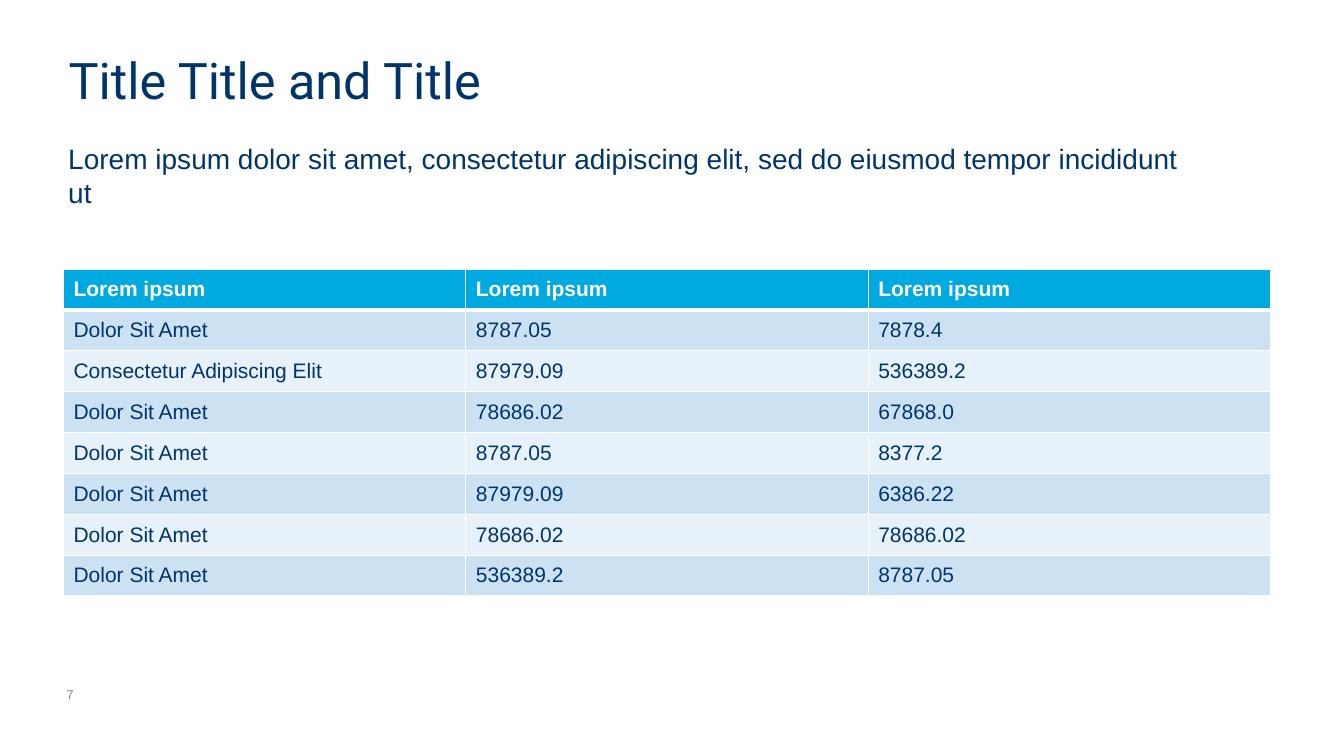
from lxml import etree
from pptx import Presentation
from pptx import util as u
from pptx.dml import color
from pptx.enum import text
from pptx.oxml import ns

NAVY = "00346B"
WHITE = "FFFFFF"
HEADER_FILL = "00A9E0"
BAND_FILLS = ("CCE2F3", "E7F1F9")

TITLE_FORMAT = {"name": "Roboto", "size": u.Pt(36)}
SUBTITLE_FORMAT = {"name": "Arial", "size": u.Pt(20)}
HEADER_FORMAT = {"name": "Arial", "size": u.Pt(15), "bold": True}
BODY_FORMAT = {"name": "Arial", "size": u.Pt(15), "bold": False}
NUMBER_FORMAT = {"name": "Arial", "size": u.Pt(9)}

TABLE_ROWS = (
    ("Lorem ipsum", "Lorem ipsum", "Lorem ipsum"),
    ("Dolor Sit Amet", "8787.05", "7878.4"),
    ("Consectetur Adipiscing Elit", "87979.09", "536389.2"),
    ("Dolor Sit Amet", "78686.02", "67868.0"),
    ("Dolor Sit Amet", "8787.05", "8377.2"),
    ("Dolor Sit Amet", "87979.09", "6386.22"),
    ("Dolor Sit Amet", "78686.02", "78686.02"),
    ("Dolor Sit Amet", "536389.2", "8787.05"),
)


def rgb(value):
    return color.RGBColor.from_string(value)


def write_text(frame, content, font_format, font_color):
    paragraph = frame.paragraphs[0]
    run = paragraph.add_run()
    run.text = content
    for attribute, value in font_format.items():
        setattr(run.font, attribute, value)
    run.font.color.rgb = rgb(font_color)


def add_text(slide, box, content, font_format, font_color, frame_format):
    frame = slide.shapes.add_textbox(*map(u.Cm, box)).text_frame
    frame.word_wrap = True
    for attribute, value in frame_format.items():
        setattr(frame, attribute, value)
    write_text(frame, content, font_format, font_color)


def add_borders(cell, bottom_width):
    properties = cell._tc.get_or_add_tcPr()
    widths = {"a:lnL": 1, "a:lnR": 1, "a:lnT": 1, "a:lnB": bottom_width}
    for position, (tag, width) in enumerate(widths.items()):
        line = etree.Element(ns.qn(tag), w=str(u.Pt(width)))
        fill = etree.SubElement(line, ns.qn("a:solidFill"))
        etree.SubElement(fill, ns.qn("a:srgbClr"), val=WHITE)
        properties.insert(position, line)


def add_data_table(slide, box, rows):
    left, top, width, height = map(u.Cm, box)
    column_count = len(rows[0])
    table = slide.shapes.add_table(
        len(rows), column_count, left, top, width, height
    ).table
    for row_index, values in enumerate(rows):
        is_header = row_index == 0
        fill = HEADER_FILL if is_header else BAND_FILLS[(row_index - 1) % 2]
        for column_index, value in enumerate(values):
            cell = table.cell(row_index, column_index)
            cell.vertical_anchor = text.MSO_ANCHOR.MIDDLE
            cell.fill.solid()
            cell.fill.fore_color.rgb = rgb(fill)
            add_borders(cell, 3 if is_header else 1)
            write_text(
                cell.text_frame,
                value,
                HEADER_FORMAT if is_header else BODY_FORMAT,
                WHITE if is_header else NAVY,
            )


def build_table_slide(presentation):
    slide = presentation.slides.add_slide(presentation.slide_layouts[6])
    margins = ("margin_left", "margin_top", "margin_right", "margin_bottom")
    flush_middle = dict.fromkeys(margins, 0)
    flush_middle["vertical_anchor"] = text.MSO_ANCHOR.MIDDLE
    add_text(slide, (1.73, 1.3, 30.28, 1.42), "Title Title and Title",
             TITLE_FORMAT, NAVY, flush_middle)
    add_data_table(slide, (1.6, 6.78, 30.42, 8.24), TABLE_ROWS)
    add_text(
        slide,
        (1.47, 3.45, 28.98, 2.82),
        "Lorem ipsum dolor sit amet, consectetur adipiscing elit, "
        "sed do eiusmod tempor incididunt ut",
        SUBTITLE_FORMAT,
        NAVY,
        {"vertical_anchor": text.MSO_ANCHOR.TOP},
    )
    add_text(slide, (1.68, 17.22, 7.62, 0.58), "7",
             NUMBER_FORMAT, "808080", flush_middle)


def main():
    presentation = Presentation()
    presentation.slide_width = u.Cm(33.87)
    presentation.slide_height = u.Cm(19.05)
    build_table_slide(presentation)
    presentation.save("out.pptx")


if __name__ == "__main__":
    main()
